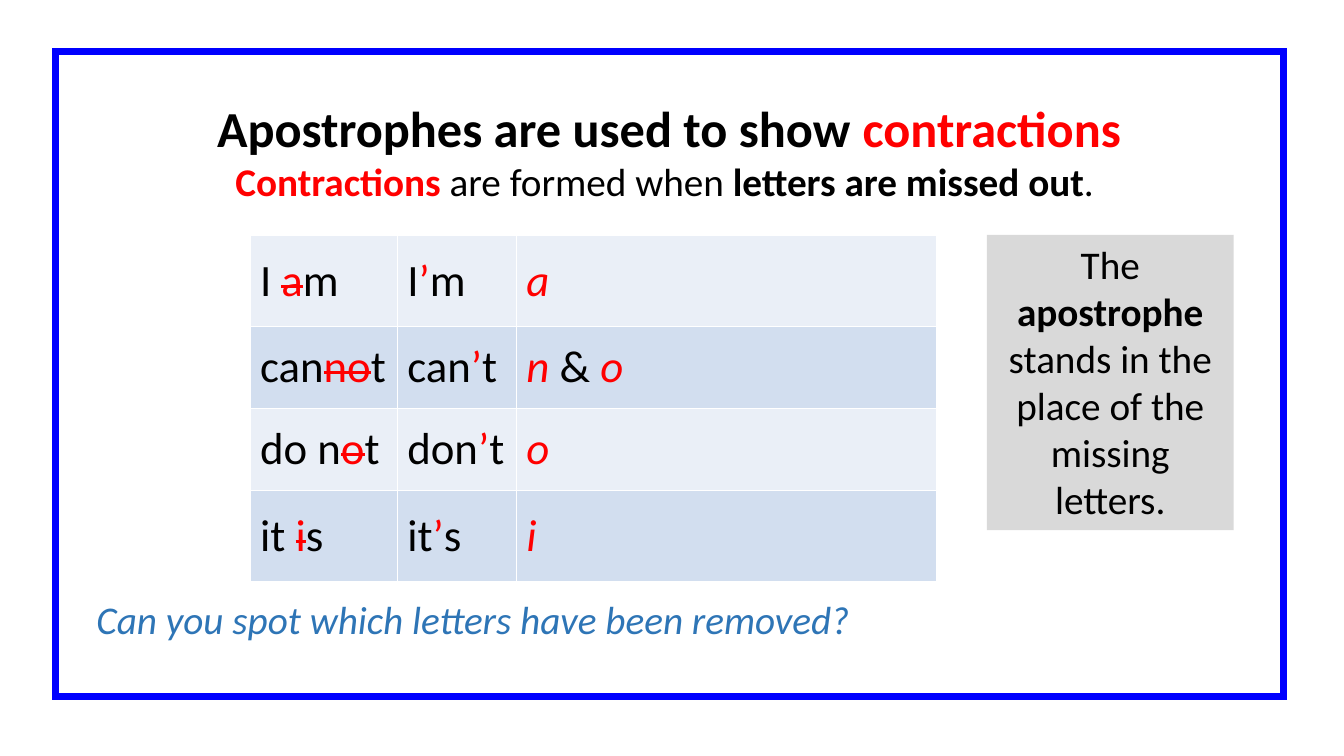
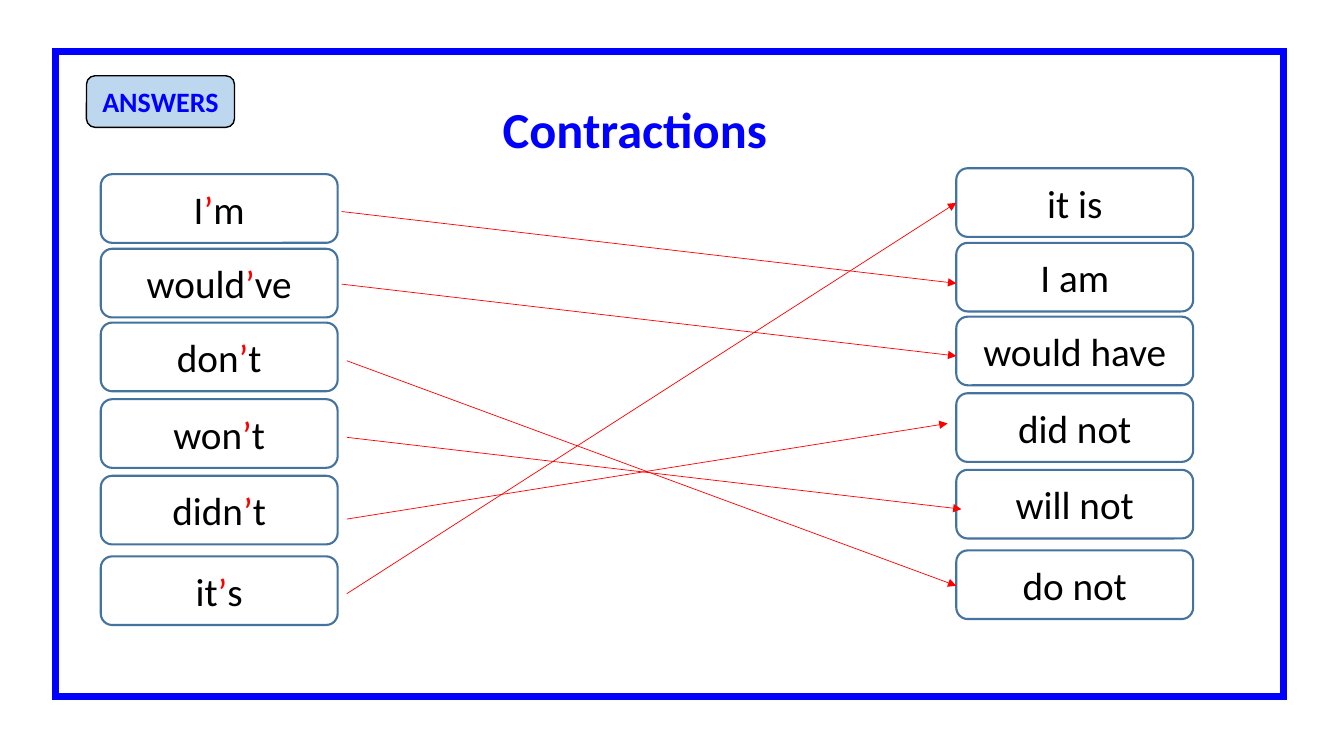
"""Build two slides on apostrophes and contractions."""
from pptx import Presentation
from pptx.dml.color import RGBColor
from pptx.enum.shapes import MSO_CONNECTOR, MSO_SHAPE
from pptx.enum.text import MSO_ANCHOR, MSO_AUTO_SIZE, PP_ALIGN
from pptx.oxml.ns import qn
from pptx.util import Cm, Pt
from lxml.etree import SubElement

FONT = "Calibri"
BLACK, WHITE, RED, BLUE = "000000", "FFFFFF", "FF0000", "0000FF"
QUESTION_BLUE, NOTE_GREY = "2E75B6", "D9D9D9"
BOX_LINE, BADGE_FILL = "43739E", "BDD7EE"
BANDS = ("EAEFF7", "D2DEEF")

STYLES = {
    "plain": {},
    "bold": {"bold": True},
    "red": {"color": RED},
    "red bold": {"color": RED, "bold": True},
    "red italic": {"color": RED, "italic": True},
    "struck": {"color": RED, "strike": True},
    "blue bold": {"color": BLUE, "bold": True},
    "question": {"color": QUESTION_BLUE, "italic": True},
}

FRAME = (1.4, 1.3, 30.94, 16.26)

RULE_TITLE = [
    (36, [("Apostrophes are used to show ", "bold"), ("contractions", "red bold")]),
    (28, [("Contractions", "red bold"), (" are formed when ", "plain"),
          ("letters are missed out", "bold"), (". ", "plain")]),
]
QUESTION = [(28, [("Can you spot which letters have been removed?", "question")])]
NOTE = [(28, [("The ", "plain"), ("apostrophe", "bold"),
              (" stands in the place of the missing letters.", "plain")])]
EXAMPLES = [
    (("I ", "a", "m"), "I’m", [("a", "red italic")]),
    (("can", "no", "t"), "can’t",
     [("n ", "red italic"), ("& ", "plain"), ("o", "red italic")]),
    (("do n", "o", "t"), "don’t", [("o", "red italic")]),
    (("it ", "i", "s"), "it’s", [("i", "red italic")]),
]
COL_WIDTHS = (3.71, 3.0, 10.59)
ROW_HEIGHTS = (2.31, 2.06, 2.06, 2.31)

ANSWERS_TITLE = [(36, [("Contractions", "blue bold")])]
BADGE = [(20, [("ANSWERS", "blue bold")])]
SHORT_FORMS = ["I’m", "would’ve", "don’t", "won’t", "didn’t", "it’s"]
LONG_FORMS = ["it is", "I am", "would have", "did not", "will not", "do not"]
SHORT_LEFT, LONG_LEFT = 2.54, 24.1
BOX_TOPS = (4.39, 6.27, 8.13, 10.06, 11.99, 14.02)
LONG_RISE = 0.15
BOX_SIZE = (5.97, 1.73)
ARROWS = [
    (8.61, 5.33, 24.1, 7.14),
    (8.61, 7.16, 24.1, 8.97),
    (8.74, 9.09, 24.1, 14.76),
    (8.74, 11.02, 24.23, 12.83),
    (8.74, 13.08, 23.88, 10.67),
    (8.74, 14.96, 24.1, 5.11),
]


def rgb(value):
    return RGBColor.from_string(value)


def cms(values):
    return [Cm(v) for v in values]


def apostrophe_runs(word):
    before, mark, after = word.partition("’")
    runs = [(before, "plain"), (mark, "red"), (after, "plain")]
    return [run for run in runs if run[0]]


def write(tf, paragraphs, align=PP_ALIGN.CENTER):
    for i, (size, runs) in enumerate(paragraphs):
        p = tf.add_paragraph() if i else tf.paragraphs[0]
        p.alignment = align
        p.line_spacing = 1.0
        p.space_before = Pt(0)
        for text, name in runs:
            style = STYLES[name]
            r = p.add_run()
            r.text = text
            r.font.name, r.font.size = FONT, Pt(size)
            r.font.bold = style.get("bold", False)
            r.font.italic = style.get("italic", False)
            r.font.color.rgb = rgb(style.get("color", BLACK))
            if style.get("strike"):
                r.font._element.set("strike", "sngStrike")


def add_box(s, kind, at, fill=None, line=None, width=1, text=()):
    sp = s.shapes.add_shape(kind, *cms(at))
    sp.shadow.inherit = False
    if fill:
        sp.fill.solid()
        sp.fill.fore_color.rgb = rgb(fill)
    else:
        sp.fill.background()
    if line:
        sp.line.color.rgb = rgb(line)
        sp.line.width = Pt(width)
    else:
        sp.line.fill.background()
    sp.text_frame.word_wrap = True
    write(sp.text_frame, text)
    return sp


def add_slide(prs, title, at):
    s = prs.slides.add_slide(prs.slide_layouts[5])
    sp = s.shapes.title
    sp.left, sp.top, sp.width, sp.height = cms(at)
    tf = sp.text_frame
    tf.word_wrap = True
    tf.auto_size = MSO_AUTO_SIZE.NONE
    tf.vertical_anchor = MSO_ANCHOR.TOP
    write(tf, title)
    frame = add_box(s, MSO_SHAPE.RECTANGLE, FRAME, line=BLUE, width=5)
    SubElement(frame._element.spPr.find(qn("a:ln")), qn("a:miter"), lim="800000")
    return s


def add_examples(s):
    at = (6.3, 5.92, sum(COL_WIDTHS), sum(ROW_HEIGHTS))
    table = s.shapes.add_table(len(EXAMPLES), len(COL_WIDTHS), *cms(at)).table
    for col, width in zip(table.columns, COL_WIDTHS):
        col.width = Cm(width)
    for i, (row, height) in enumerate(zip(table.rows, ROW_HEIGHTS)):
        row.height = Cm(height)
        parts, short, removed = EXAMPLES[i]
        full = list(zip(parts, ("plain", "struck", "plain")))
        for cell, runs in zip(row.cells, (full, apostrophe_runs(short), removed)):
            cell.fill.solid()
            cell.fill.fore_color.rgb = rgb(BANDS[i % 2])
            cell.vertical_anchor = MSO_ANCHOR.MIDDLE
            write(cell.text_frame, [(32, runs)], PP_ALIGN.LEFT)


def add_arrow(s, points):
    line = s.shapes.add_connector(MSO_CONNECTOR.STRAIGHT, *cms(points))
    line.line.color.rgb = rgb(RED)
    line.line.width = Pt(0.5)
    spPr = line._element.spPr
    SubElement(spPr.find(qn("a:ln")), qn("a:tailEnd"), type="triangle")
    SubElement(spPr, qn("a:effectLst"))


def build_rule_slide(prs):
    s = add_slide(prs, RULE_TITLE, (2.18, 2.31, 29.36, 3))
    add_examples(s)
    tf = s.shapes.add_textbox(*cms((2.18, 14.88, 27.64, 1.45))).text_frame
    tf.word_wrap = True
    write(tf, QUESTION, PP_ALIGN.LEFT)
    note = add_box(s, MSO_SHAPE.RECTANGLE, (24.87, 5.92, 6.22, 7.44),
                   fill=NOTE_GREY, text=NOTE)
    note.text_frame.vertical_anchor = MSO_ANCHOR.TOP


def build_answers_slide(prs):
    s = add_slide(prs, ANSWERS_TITLE, (1.32, 2.34, 29.36, 1.8))
    for words, left, rise in ((SHORT_FORMS, SHORT_LEFT, 0),
                              (LONG_FORMS, LONG_LEFT, LONG_RISE)):
        for word, top in zip(words, BOX_TOPS):
            add_box(s, MSO_SHAPE.ROUNDED_RECTANGLE, (left, top - rise, *BOX_SIZE),
                    WHITE, BOX_LINE, 1.5, [(28, apostrophe_runs(word))])
    add_box(s, MSO_SHAPE.ROUNDED_RECTANGLE, (2.18, 1.91, 3.73, 1.3),
            BADGE_FILL, BLACK, 1, BADGE)
    for points in ARROWS:
        add_arrow(s, points)


def main():
    prs = Presentation()
    prs.slide_width, prs.slide_height = Cm(33.87), Cm(19.05)
    build_rule_slide(prs)
    build_answers_slide(prs)
    prs.save("out.pptx")


if __name__ == "__main__":
    main()
